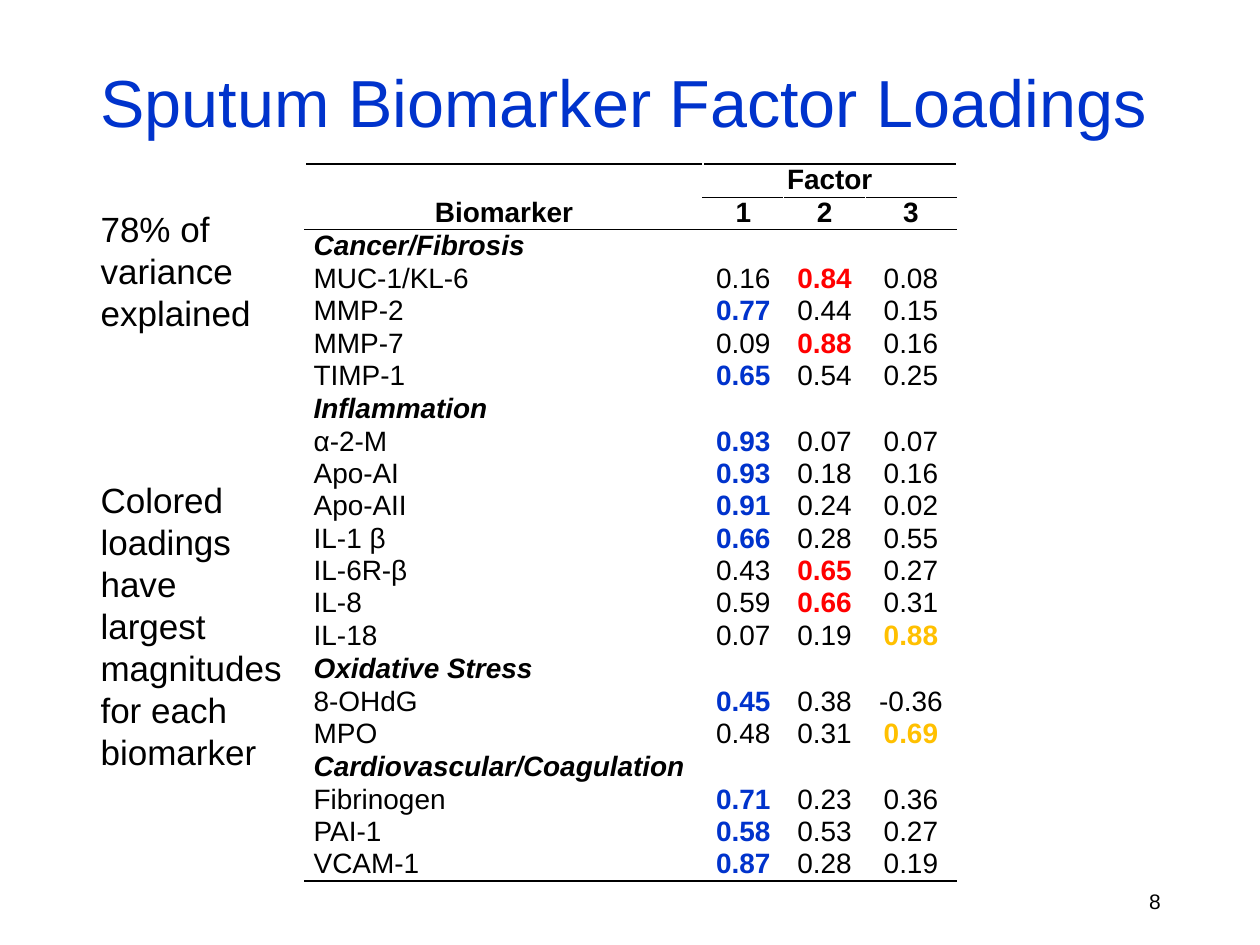
import pptx
import pptx.dml.color
import pptx.enum.text
import pptx.oxml
import pptx.oxml.ns
import pptx.util

ALIGN = pptx.enum.text.PP_ALIGN
ANCHOR = pptx.enum.text.MSO_ANCHOR
COLORS = {"ink": "000000", "title": "0033CC",
          "factor 1": "0033CC", "factor 2": "FF0000", "factor 3": "FFC000"}
FONT = "Arial"
GRID_COLUMNS, GRID_ROWS = 100, 75
SLIDE_WIDTH, SLIDE_HEIGHT = pptx.util.Inches(10), pptx.util.Inches(7.5)
TABLE_SIZE = 16
LOADINGS = {
    "Cancer/Fibrosis": [
        ("MUC-1/KL-6", 0.16, 0.84, 0.08),
        ("MMP-2", 0.77, 0.44, 0.15),
        ("MMP-7", 0.09, 0.88, 0.16),
        ("TIMP-1", 0.65, 0.54, 0.25),
    ],
    "Inflammation": [
        ("α-2-M", 0.93, 0.07, 0.07),
        ("Apo-AI", 0.93, 0.18, 0.16),
        ("Apo-AII", 0.91, 0.24, 0.02),
        ("IL-1 β", 0.66, 0.28, 0.55),
        ("IL-6R-β", 0.43, 0.65, 0.27),
        ("IL-8", 0.59, 0.66, 0.31),
        ("IL-18", 0.07, 0.19, 0.88),
    ],
    "Oxidative Stress": [
        ("8-OHdG", 0.45, 0.38, -0.36),
        ("MPO", 0.48, 0.31, 0.69),
    ],
    "Cardiovascular/Coagulation": [
        ("Fibrinogen", 0.71, 0.23, 0.36),
        ("PAI-1", 0.58, 0.53, 0.27),
        ("VCAM-1", 0.87, 0.28, 0.19),
    ],
}


def across(columns):
    """Return the width of a number of grid columns."""
    return round(SLIDE_WIDTH * columns / GRID_COLUMNS)


def down(rows):
    """Return the height of a number of grid rows."""
    return round(SLIDE_HEIGHT * rows / GRID_ROWS)


def style(paragraph, size, color="ink", bold=False, italic=False, align=ALIGN.LEFT):
    """Set the alignment and font of one paragraph."""
    paragraph.alignment = align
    font = paragraph.font
    font.name, font.size = FONT, pptx.util.Pt(size)
    font.bold, font.italic = bold, italic
    font.color.rgb = pptx.dml.color.RGBColor.from_string(COLORS[color])


def add_text(slide, text, area, size, color="ink", align=ALIGN.LEFT, anchor=ANCHOR.TOP):
    """Add wrapped text in a grid area of left, top, width and height."""
    left, top, width, height = area
    frame = slide.shapes.add_textbox(
        across(left), down(top), across(width), down(height)).text_frame
    frame.word_wrap = True
    frame.vertical_anchor = anchor
    frame.text = text
    style(frame.paragraphs[0], size, color, align=align)


def add_rule(cell, side):
    """Draw a thin line on the T or B side of a cell."""
    cell._tc.get_or_add_tcPr().append(pptx.oxml.parse_xml(
        f'<a:ln{side} {pptx.oxml.ns.nsdecls("a")} w="12700"><a:solidFill>'
        f'<a:srgbClr val="{COLORS["ink"]}"/></a:solidFill></a:ln{side}>'))


def fill_cell(cell, text, **look):
    """Write one table cell with tight margins and no fill."""
    cell.fill.background()
    cell.margin_left = cell.margin_right = across(0.7)
    cell.margin_top = cell.margin_bottom = 0
    cell.vertical_anchor = ANCHOR.MIDDLE
    cell.text = text
    paragraph = cell.text_frame.paragraphs[0]
    paragraph.line_spacing = 0.96
    style(paragraph, TABLE_SIZE, **look)
    if not text:
        paragraph._p.append(pptx.oxml.parse_xml(
            f'<a:endParaRPr {pptx.oxml.ns.nsdecls("a")} sz="{TABLE_SIZE * 100}"/>'))


def table_rows():
    """Return every table row as a list of text and look pairs."""
    header = {"bold": True, "align": ALIGN.CENTER}
    rows = [
        [(text, header) for text in ("", "Factor", "", "")],
        [(text, header) for text in ("Biomarker", "1", "2", "3")],
    ]
    for group, biomarkers in LOADINGS.items():
        rows.append([(group, {"bold": True, "italic": True})] + [("", {})] * 3)
        for biomarker, *loadings in biomarkers:
            largest = max(loadings, key=abs)
            row = [(biomarker, {})]
            for factor, loading in enumerate(loadings, 1):
                look = {"align": ALIGN.CENTER}
                if loading == largest:
                    look.update(color=f"factor {factor}", bold=True)
                row.append((f"{loading:.2f}", look))
            rows.append(row)
    return rows


def add_loadings_table(slide):
    """Add the factor loadings with rules around header and body."""
    rows = table_rows()
    widths = (31.6, 6.4, 6.5, 7.2)
    height = 54.5
    table = slide.shapes.add_table(
        len(rows), len(widths), across(24.2), down(13),
        across(sum(widths)), down(height)).table
    table.first_row = table.horz_banding = False
    for column, width in zip(table.columns, widths):
        column.width = across(width)
    last = len(rows) - 1
    for r, row in enumerate(rows):
        table.rows[r].height = down(height / len(rows))
        for c, (text, look) in enumerate(row):
            cell = table.cell(r, c)
            if r in (0, 2) or (r == 1 and c > 0):
                add_rule(cell, "T")
            if r in (1, last) or (r == 0 and c > 0):
                add_rule(cell, "B")
            fill_cell(cell, text, **look)
    table.cell(0, 1).merge(table.cell(0, 3))


def main():
    """Build the factor loadings slide."""
    deck = pptx.Presentation()
    deck.slide_width, deck.slide_height = SLIDE_WIDTH, SLIDE_HEIGHT
    slide = deck.slides.add_slide(deck.slide_layouts[6])
    add_text(slide, "Sputum Biomarker Factor Loadings", (7, 3, 86, 10), 38,
             color="title", anchor=ANCHOR.MIDDLE)
    add_text(slide, "8", (70.6, 69.5, 22.5, 4), 12,
             align=ALIGN.RIGHT, anchor=ANCHOR.MIDDLE)
    add_loadings_table(slide)
    add_text(slide, "78% of variance explained", (7, 16, 17, 11.1), 20)
    add_text(slide, "Colored loadings have largest magnitudes for each biomarker",
             (7, 37.5, 17, 24.6), 20)
    deck.save("out.pptx")


if __name__ == "__main__":
    main()
